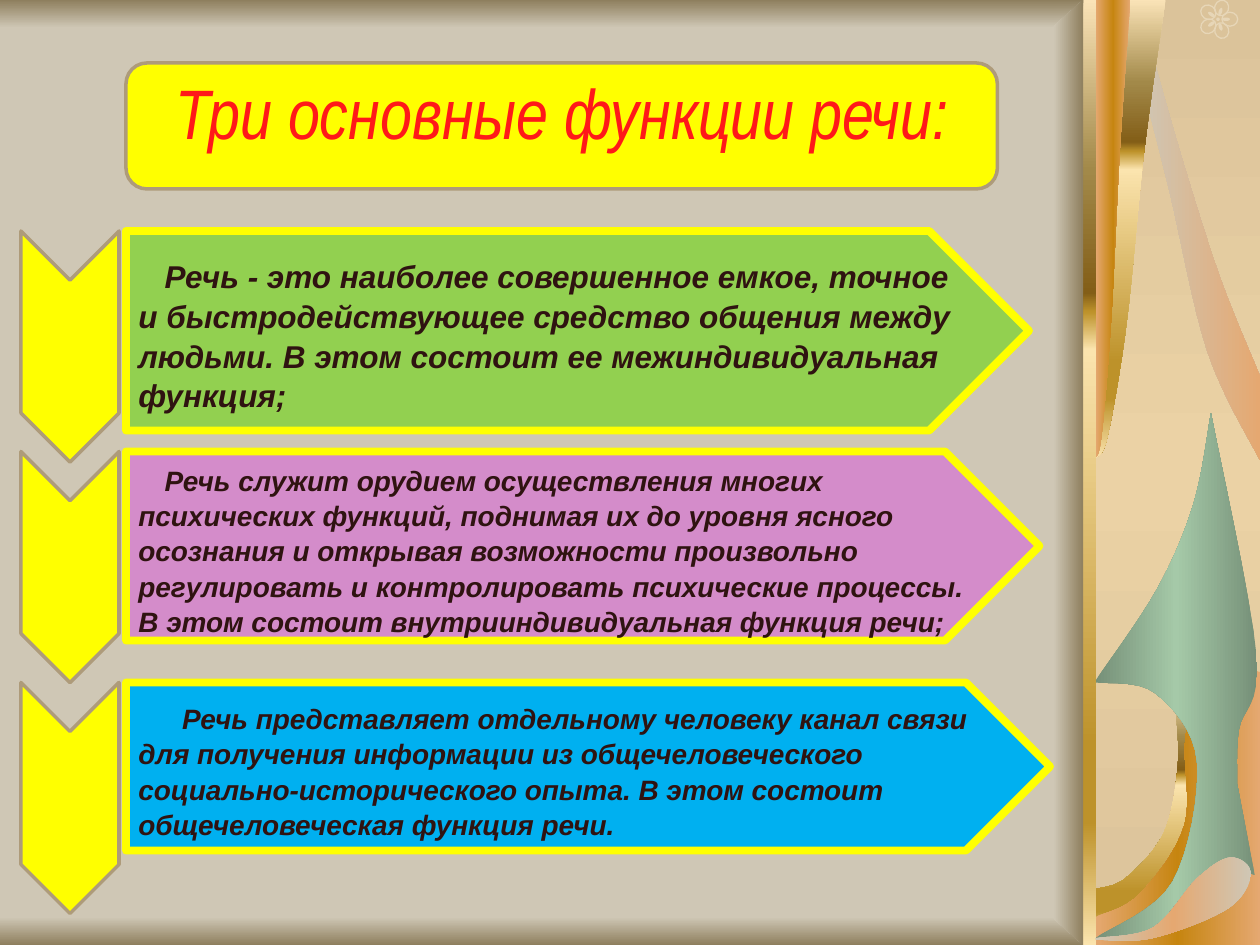
import math

import pptx
import pptx.util
import pptx.oxml
import pptx.oxml.ns
import pptx.dml.color
import pptx.enum.shapes
import pptx.enum.text

Pt = pptx.util.Pt
KIND = pptx.enum.shapes.MSO_SHAPE
TEXT = pptx.enum.text

# Content
TITLE = "Три основные функции речи:"
# text, top, height, fill, type size, first-line indent
PLATES = [
    ("Речь - это наиболее совершенное емкое, точное и быстродействующее средство "
     "общения между людьми. В этом состоит ее межиндивидуальная функция;",
     132, 114, "92D050", 18, 15),
    ("Речь служит орудием осуществления многих психических функций, поднимая их до "
     "уровня ясного осознания и открывая возможности произвольно регулировать и "
     "контролировать психические процессы. В этом состоит внутрииндивидуальная "
     "функция речи;",
     258, 108, "D48CCA", 16, 15),
    ("Речь представляет отдельному человеку канал связи для получения информации из "
     "общечеловеческого социально-исторического опыта. В этом состоит "
     "общечеловеческая функция речи.",
     390, 96, "00B0F0", 16, 25),
]

# Colours and type sizes
THEME = {
    "back": "CFC7B5", "yellow": "FFFF00", "edge": "AE9B7A", "red": "FF1919",
    "ink": "2F1311", "petal": "E7D6B7", "font": "Arial", "head": "Arial Narrow",
    "size": 40,
}
SHADE = [(0, "CFC7B5"), (100, "8E7F5E")]
DUSK = [(0, "8E7F5E"), (100, "CFC7B5")]
SAND = [(0, "DBC39A"), (50, "EBD2A5"), (100, "DBC39A")]
GOLD = [(0, "FAE3B7"), (18, "A28949"), (31, "835E17"), (33, "BD922A"),
        (37, "FBE4AE"), (79, "BD922A"), (87, "BD922A"), (100, "FBE4AE")]
AMBER = [(0, "E5A871"), (50, "C68510"), (100, "E5A871")]
GREEN = [(0, "769078"), (50, "A5C9A8"), (100, "769078")]
PEACH = [(0, "CFC7B5"), (100, "E5A871")]
CURL = [(0, "CFC7B5"), (50, "E5A871"), (100, "CFC7B5")]

# Page layout
WIDE, HIGH, EDGE = 720, 540, 626
BAR = 7.5

# Ribbons: each is a chain of smooth runs, joined by straight lines
SWIRL = [[(672, 406), (673, 438), (665, 476), (643, 502), (EDGE, 508)],
         [(EDGE, HIGH), (WIDE, HIGH)], [(WIDE, 409), (700, 395)]]
SWOOP = [[(EDGE, 524), (651, 511), (677, 471), (679, 414), (710, 382)],
         [(WIDE, 384), (WIDE, HIGH)], [(EDGE, HIGH)]]
LEAF = [[(692, 236), (682, 288), (661, 337), (EDGE, 389)],
        [(EDGE, 390), (660, 396), (684, 435), (670, 504), (EDGE, 536)],
        [(648, 538), (673, 528), (699, 497), (717, 500)],
        [(707, 448), (708, 417), (718, 374), (692, 236)]]
STREAM = [[(658, 29), (675, 89), (697, 158), (WIDE, 215)],
          [(WIDE, 263), (690, 201), (668, 108), (651, 42)]]
FOLD = [[(EDGE, 536), (659, 530), (684, 502), (703, 490), (715, 499),
         (702, 519), (659, 536), (EDGE, 537)]]
# Hanging ribbon: reach from the edge at each height
DROP = [(40, 0), (28, 85), (18, 183), (7, 249), (0, 262)]

deck = pptx.Presentation()
deck.slide_width, deck.slide_height = Pt(WIDE), Pt(HIGH)
slide = deck.slides.add_slide(deck.slide_layouts[5])
shapes = slide.shapes


def tint(name):
    return pptx.dml.color.RGBColor.from_string(THEME.get(name, name))


def paint(shape, fill=None, line=None, width=1):
    shape.shadow.inherit = False
    if fill:
        shape.fill.solid()
        shape.fill.fore_color.rgb = tint(fill)
    else:
        shape.fill.background()
    if line:
        shape.line.color.rgb = tint(line)
        shape.line.width = Pt(width)
    else:
        shape.line.fill.background()
    return shape


def blend(shape, stops, angle):
    paint(shape)
    shape.fill.gradient()
    marks = "".join(f'<a:gs pos="{at * 1000}"><a:srgbClr val="{hue}"/></a:gs>'
                    for at, hue in stops)
    grad = pptx.oxml.parse_xml(
        f'<a:gradFill rotWithShape="1" {pptx.oxml.ns.nsdecls("a")}><a:gsLst>{marks}'
        f'</a:gsLst><a:lin ang="{angle * 60000}" scaled="0"/></a:gradFill>')
    old = shape._element.spPr.find(pptx.oxml.ns.qn("a:gradFill"))
    old.getparent().replace(old, grad)


def place(kind, left, top, width, height):
    return shapes.add_shape(kind, Pt(left), Pt(top), Pt(width), Pt(height))


def band(left, top, width, height, stops):
    blend(place(KIND.RECTANGLE, left, top, width, height), stops, 90)


def smooth(knots, steps=8):
    """Points of a soft curve through the knots."""
    dots = [knots[0]]
    ends = [knots[0], *knots, knots[-1]]
    for a, b, c, d in zip(ends, ends[1:], ends[2:], ends[3:]):
        for n in range(1, steps + 1):
            t = n / steps
            dots.append(tuple(
                q + t * (r - p + t * (2 * p - 5 * q + 4 * r - s
                                      + t * (3 * q - p - 3 * r + s))) / 2
                if 0 < t < 1 else r
                for p, q, r, s in zip(a, b, c, d)))
    return dots


def ribbon(runs, stops, angle):
    dots = [(Pt(x), Pt(y)) for run in runs for x, y in smooth(run)]
    pen = shapes.build_freeform(*dots[0], scale=1.0)
    pen.add_line_segments(dots[1:], close=True)
    blend(pen.convert_to_shape(), stops, angle)


def write(para, text, size, font, color, bold):
    run = para.add_run()
    run.text = text
    run.font.size, run.font.name = Pt(size), font
    run.font.bold, run.font.italic = bold, True
    run.font.color.rgb = tint(color)


# Backdrop
slide.background.fill.solid()
slide.background.fill.fore_color.rgb = tint("back")
band(0, HIGH - 16, EDGE, 16, SHADE)
band(0, 0, EDGE, 16, DUSK)
band(EDGE, 0, WIDE - EDGE, HIGH, SAND)

# Flower: five petals with a stamen each, around a centre
for n in range(5):
    turn = math.radians(72 * n)
    for reach, wide, high, fill, line in ((6.8, 9, 8, None, "petal"),
                                          (4.6, 4.5, 2, "petal", None)):
        x, y = 696 + reach * math.cos(turn), 11 + reach * math.sin(turn)
        leaf = place(KIND.OVAL, x - wide / 2, y - high / 2, wide, high)
        leaf.rotation = 72 * n
        paint(leaf, fill, line, 0.75)
paint(place(KIND.OVAL, 695, 10, 2, 2), "petal")

# Ribbons and the gold bar
ribbon(SWIRL, GOLD, 90)
ribbon(SWOOP, AMBER, 0)
ribbon(LEAF, GREEN, 0)
ribbon(STREAM, PEACH, 0)
for part, stops, angle in ((1, GOLD, 90), (0.5, AMBER, 0)):
    ribbon([[(EDGE + part * x, y) for x, y in DROP], [(EDGE, 0)]], stops, angle)
left = EDGE + 0.5 - BAR
band(left, 0, BAR, HIGH, GOLD)
ribbon(FOLD, CURL, 0)
ribbon([[(left, 0)], [(left - 17, 15)], [(left - 17, HIGH - 15)], [(left, HIGH)]],
       SHADE, 0)

# Title on its panel
paint(place(KIND.ROUNDED_RECTANGLE, 72, 36, 498, 72), "yellow", "edge", 2)
head = shapes.title
head.left, head.top, head.width, head.height = Pt(72), Pt(36), Pt(498), Pt(56)
head._element.getparent().append(head._element)
frame = head.text_frame
frame.word_wrap = True
frame.auto_size = TEXT.MSO_AUTO_SIZE.NONE
frame.vertical_anchor = TEXT.MSO_ANCHOR.MIDDLE
para = frame.paragraphs[0]
para.alignment = TEXT.PP_ALIGN.CENTER
write(para, TITLE, THEME["size"], THEME["head"], "red", False)

# Plates, each with a downward chevron at its left
for n, (text, top, high, fill, size, indent) in enumerate(PLATES):
    plate = paint(place(KIND.PENTAGON, 72, top, 516 + 6 * n, high),
                  fill, "yellow", 4.5)
    frame = plate.text_frame
    frame.word_wrap = True
    frame.vertical_anchor = TEXT.MSO_ANCHOR.MIDDLE
    frame.margin_top = Pt(8)
    para = frame.paragraphs[0]
    para.alignment = TEXT.PP_ALIGN.LEFT
    para.line_spacing = 1.05
    para._p.get_or_add_pPr().set("indent", str(Pt(indent)))
    write(para, text, size, THEME["font"], "ink", True)
    mark = place(KIND.CHEVRON, 40 - 66, top + 66 - 28, 132, 56)
    mark.rotation = 90
    paint(mark, "yellow", "edge", 2)

deck.save("out.pptx")
